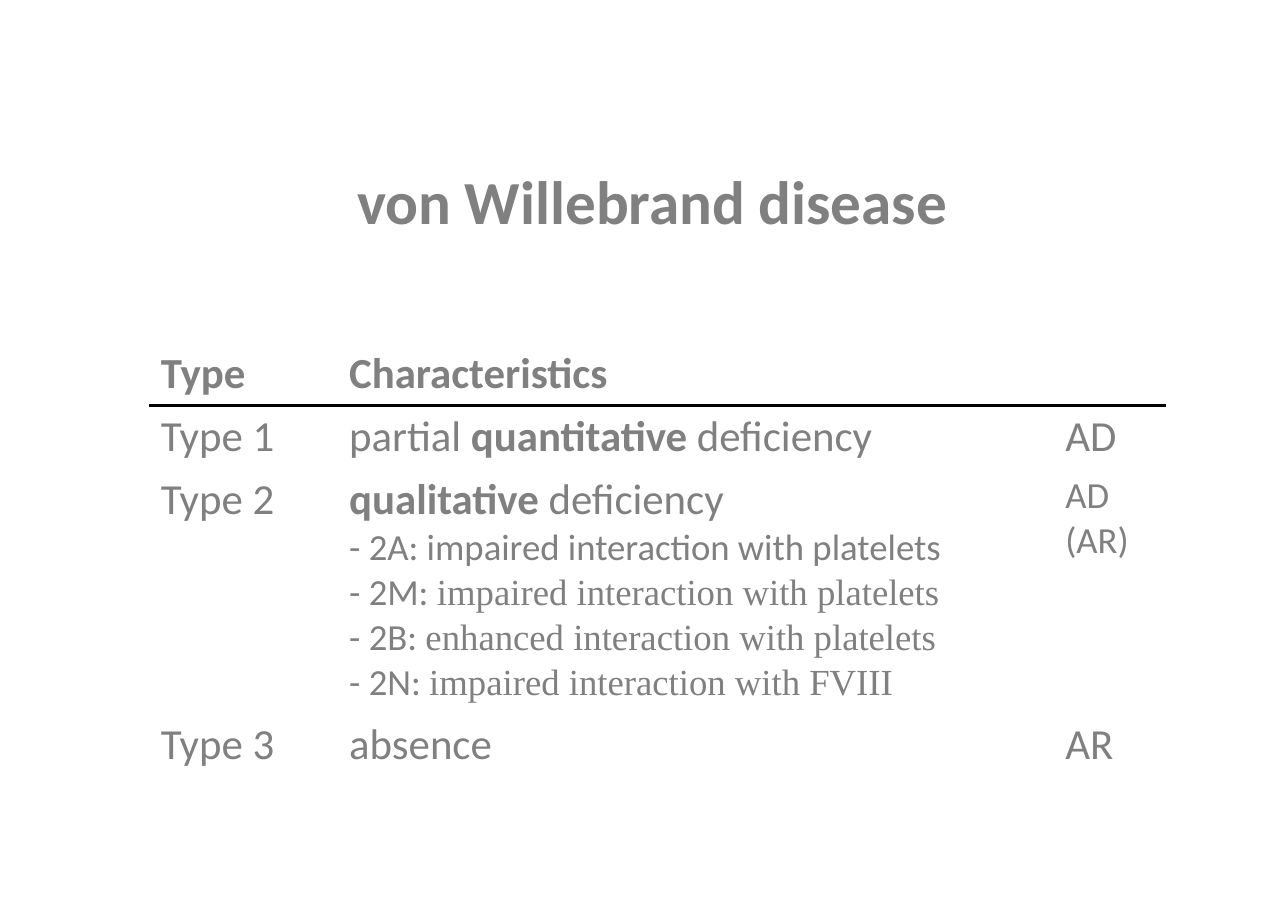
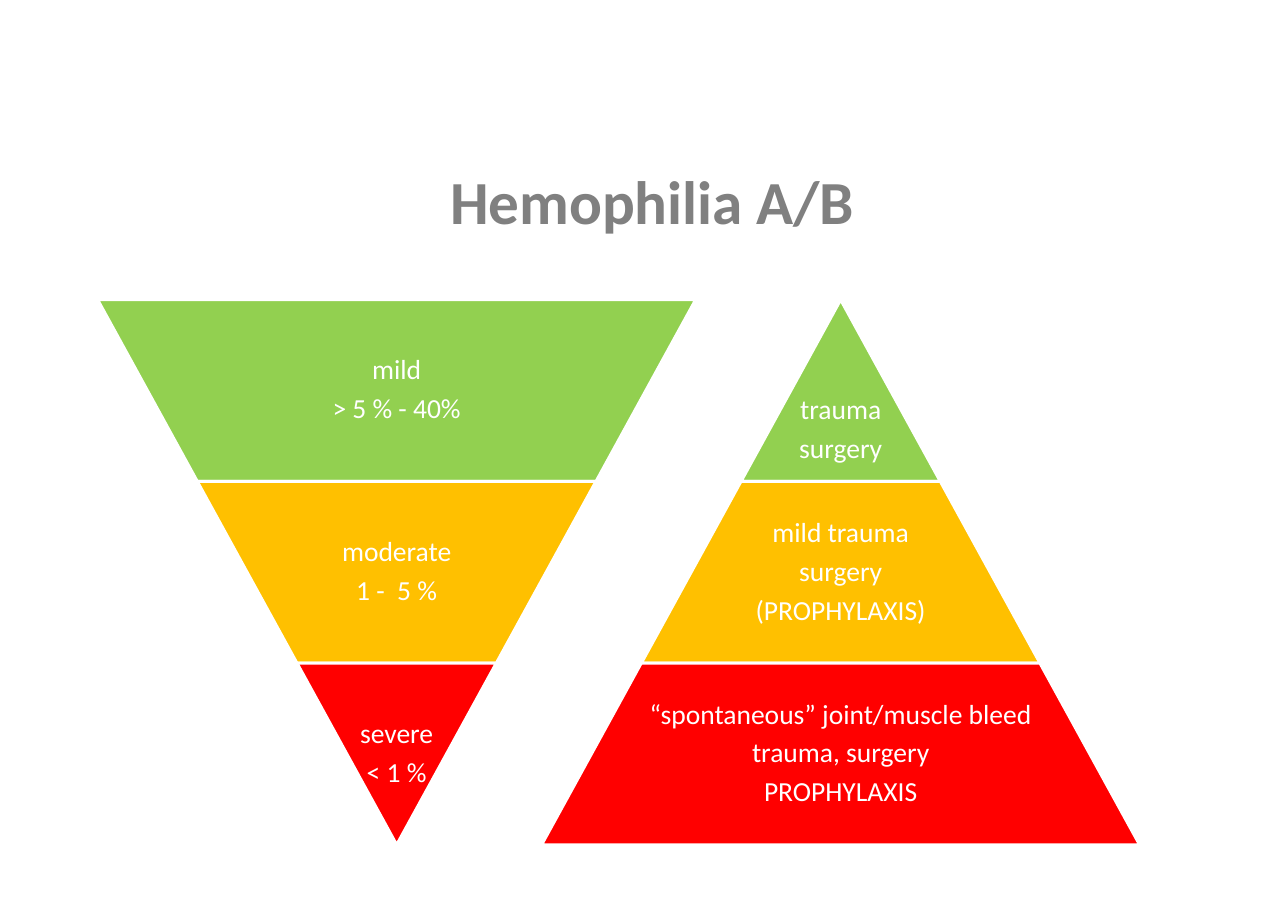
"""Build two slides on inherited bleeding disorders: a table and two tiered pyramids."""
from dataclasses import dataclass

from lxml import etree
from pptx import Presentation
from pptx.dml.color import RGBColor
from pptx.enum.shapes import MSO_SHAPE as Shape
from pptx.enum.text import MSO_ANCHOR as Anchor, PP_ALIGN as Align
from pptx.oxml.ns import qn
from pptx.slide import Slide
from pptx.table import _Cell as Cell
from pptx.util import Inches, Pt

GREY = RGBColor(0x80, 0x80, 0x80)
WHITE = RGBColor(0xFF, 0xFF, 0xFF)
BLACK = RGBColor(0x00, 0x00, 0x00)
GREEN = RGBColor(0x92, 0xD0, 0x50)
AMBER = RGBColor(0xFF, 0xC0, 0x00)
RED = RGBColor(0xFF, 0x00, 0x00)
SANS, SERIF = "Calibri", "Times New Roman"

TIER_TOP, TIER_HEIGHT, TIER_STEP = 2.72, 1.65, 1.81
TIER_COLORS = (GREEN, AMBER, RED)
TEXT_SHARE, TEXT_INSET = 0.65, 0.03


@dataclass(frozen=True)
class Run:
    text: str
    size: float = 28
    bold: bool = False
    font: str = SANS
    color: RGBColor = GREY


@dataclass(frozen=True)
class Tier:
    lines: tuple[str, ...]
    lead: float = 0


@dataclass(frozen=True)
class Pyramid:
    center: float
    tiers: tuple[Tier, ...]
    inverted: bool = False


def subtype(name: str, effect: str) -> tuple[Run, ...]:
    return Run(f"- {name}: ", 24), Run(effect, 24, font=SERIF)


HEADER = (((Run("Type", bold=True),),), ((Run("Characteristics", bold=True),),), ())
TYPE_1 = (
    ((Run("Type 1"),),),
    ((Run("partial "), Run("quantitative ", bold=True), Run("deficiency")),),
    ((Run("AD"),),),
)
TYPE_2 = (
    ((Run("Type 2"),),),
    (
        (Run("qualitative ", bold=True), Run("deficiency")),
        (Run("- 2A: impaired interaction with platelets", 24),),
        subtype("2M", "impaired interaction with platelets"),
        subtype("2B", "enhanced interaction with platelets"),
        subtype("2N", "impaired interaction with FVIII"),
    ),
    ((Run("AD (AR)", 24),),),
)
TYPE_3 = (((Run("Type 3"),),), ((Run("absence"),),), ((Run("AR"),),))
ROWS = (HEADER, TYPE_1, TYPE_2, TYPE_3)
COL_WIDTHS = (1.71, 6.5, 1.01)
ROW_HEIGHTS = (0.57, 0.57, 2.23, 0.57)

PYRAMIDS = (
    Pyramid(7.63, (
        Tier(("trauma", "surgery"), lead=0.72),
        Tier(("mild trauma", "surgery", "(PROPHYLAXIS)")),
        Tier(("“spontaneous” joint/muscle bleed", "trauma, surgery", "PROPHYLAXIS")),
    )),
    Pyramid(3.6, (
        Tier(("mild", "> 5 % - 40%")),
        Tier(("moderate", "1 -  5 %")),
        Tier(("severe", "< 1 %")),
    ), inverted=True),
)


def write(tf, paragraphs, align: Align = Align.LEFT) -> None:
    for i, runs in enumerate(paragraphs):
        p = tf.paragraphs[0] if i == 0 else tf.add_paragraph()
        p.alignment = align
        for run in runs:
            r = p.add_run()
            r.text = run.text
            r.font.name, r.font.size, r.font.bold = run.font, Pt(run.size), run.bold
            r.font.color.rgb = run.color


def add_text(shapes, box: tuple[float, ...], paragraphs, margins: tuple[float, ...]):
    tf = shapes.add_textbox(*map(Inches, box)).text_frame
    tf.word_wrap = True
    tf.vertical_anchor = Anchor.MIDDLE
    tf.margin_left, tf.margin_top, tf.margin_right, tf.margin_bottom = map(Inches, margins)
    write(tf, paragraphs, Align.CENTER)
    return tf


def add_slide(prs: Presentation, title: str) -> Slide:
    s = prs.slides.add_slide(prs.slide_layouts[6])
    add_text(s.shapes, (0.73, 1.38, 10.38, 0.87), ((Run(title, 40, True),),),
             (0.11, 0.06, 0.11, 0.06))
    return s


def set_border(cell: Cell, side: str, color: RGBColor, width: float) -> None:
    ln = etree.SubElement(cell._tc.get_or_add_tcPr(), qn(f"a:ln{side}"), w=str(Pt(width)))
    fill = etree.SubElement(ln, qn("a:solidFill"))
    etree.SubElement(fill, qn("a:srgbClr"), val=str(color))


def add_types_table(s: Slide) -> None:
    frame = s.shapes.add_table(len(ROWS), len(COL_WIDTHS), Inches(1.36), Inches(3.11),
                               Inches(sum(COL_WIDTHS)), Inches(sum(ROW_HEIGHTS)))
    table = frame.table
    table.horz_banding = False
    for column, width in zip(table.columns, COL_WIDTHS):
        column.width = Inches(width)
    for i, (row, height) in enumerate(zip(ROWS, ROW_HEIGHTS)):
        table.rows[i].height = Inches(height)
        for j, paragraphs in enumerate(row):
            cell = table.cell(i, j)
            for side in "LRTB":
                ruled = (i, side) in ((0, "B"), (1, "T"))
                set_border(cell, side, *((BLACK, 2.25) if ruled else (WHITE, 1)))
            cell.fill.solid()
            cell.fill.fore_color.rgb = WHITE
            write(cell.text_frame, paragraphs)


def add_pyramid(s: Slide, pyramid: Pyramid) -> None:
    shapes = s.shapes.add_group_shape().shapes
    count = len(pyramid.tiers)
    for i, (tier, color) in enumerate(zip(pyramid.tiers, TIER_COLORS)):
        level = count - i if pyramid.inverted else i + 1
        width = TIER_STEP * level
        top = TIER_TOP + TIER_HEIGHT * i
        sp = shapes.add_shape(Shape.TRAPEZOID, Inches(pyramid.center - width / 2), Inches(top),
                              Inches(width), Inches(TIER_HEIGHT))
        sp.adjustments[0] = TIER_STEP / 2 / TIER_HEIGHT
        sp.rotation = 180 if pyramid.inverted else 0
        sp.shadow.inherit = False
        sp.fill.solid()
        sp.fill.fore_color.rgb = color
        sp.line.color.rgb = WHITE
        sp.line.width = Pt(2)

        text_width = width if level == 1 else width * TEXT_SHARE
        tf = add_text(shapes, (pyramid.center - text_width / 2, top, text_width, TIER_HEIGHT),
                      [(Run(line, 18, color=WHITE),) for line in tier.lines],
                      (TEXT_INSET, TEXT_INSET + tier.lead, TEXT_INSET, TEXT_INSET))
        for p in tf.paragraphs:
            p.line_spacing = 0.9
            p.space_after = Pt(6)


def main() -> None:
    prs = Presentation()
    prs.slide_width, prs.slide_height = Inches(11.69), Inches(8.27)
    add_types_table(add_slide(prs, "von Willebrand disease"))
    s = add_slide(prs, "Hemophilia A/B")
    for pyramid in PYRAMIDS:
        add_pyramid(s, pyramid)
    prs.save("out.pptx")


if __name__ == "__main__":
    main()
